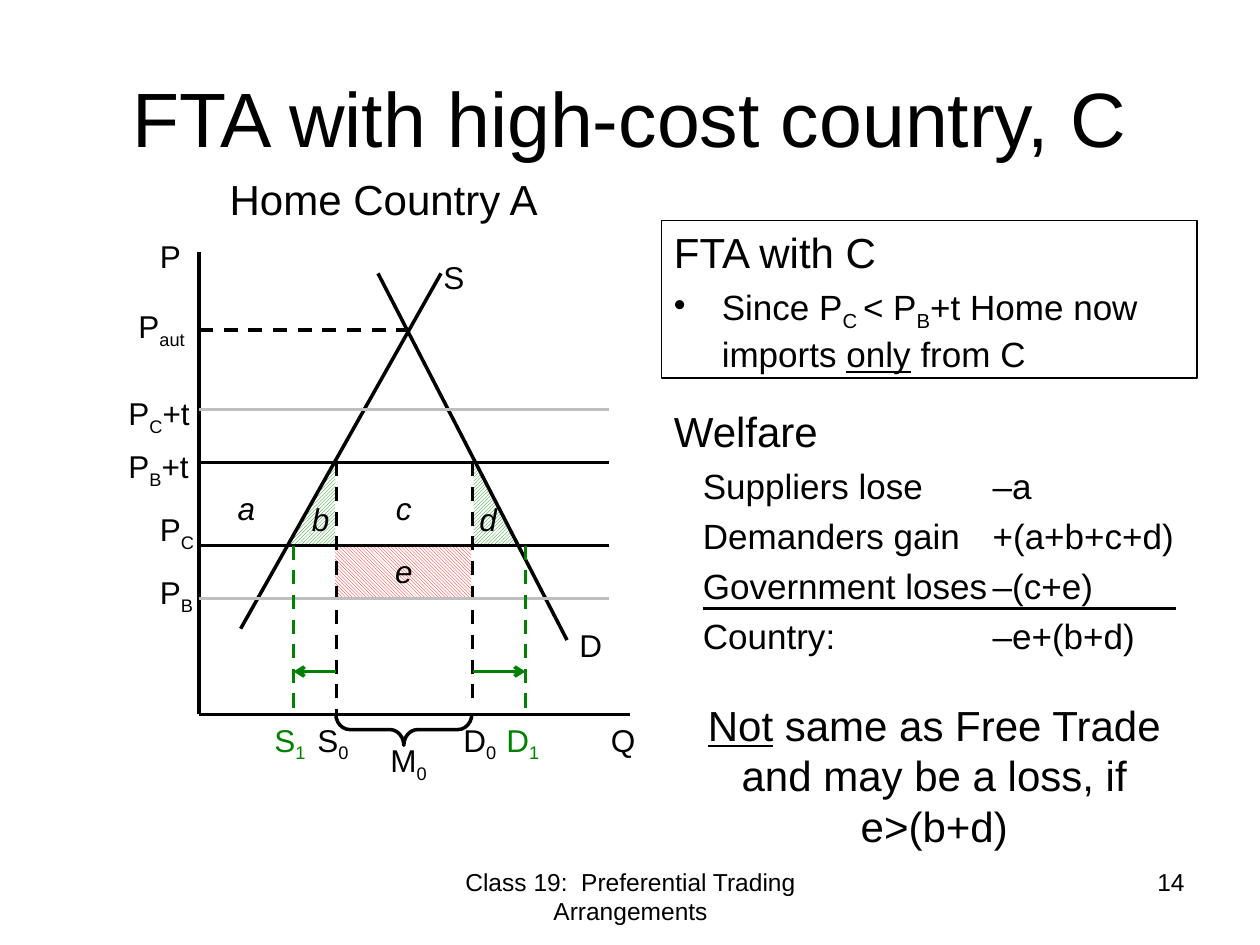
import pptx
import pptx.dml.color
import pptx.enum.dml
import pptx.enum.shapes
import pptx.enum.text
import pptx.oxml
import pptx.oxml.ns
import pptx.util
from pptx.util import Inches

COLORS = {"ink": "000000", "green": "008000", "red": "FF0000",
          "grey": "BFBFBF", "paper": "FFFFFF"}
FONT = "Arial"
ALIGN = pptx.enum.text.PP_ALIGN
SHAPE = pptx.enum.shapes.MSO_SHAPE
PATTERN = pptx.enum.dml.MSO_PATTERN

# Key prices (y) and quantities (x) of the diagram
AXIS_X, AXIS_Y, PRICE_END = 1.58, 5.67, 4.83
P_AUT, P_C_T, P_B_T, P_C, P_B = 2.62, 3.25, 3.67, 4.33, 4.75
S1, S0, D0, D1 = 2.33, 2.67, 3.75, 4.17
CHANGE_Y = 5.33


def rgb(name):
    return pptx.dml.color.RGBColor.from_string(COLORS[name])


def append_xml(parent, tag, **attributes):
    child = pptx.oxml.parse_xml(f"<a:{tag} {pptx.oxml.ns.nsdecls('a')}/>")
    for key, value in attributes.items():
        child.set(key, str(value))
    parent.append(child)
    return child


def add_line(slide, start, end, color="ink", dashed=False, arrow=False):
    line = slide.shapes.add_connector(
        pptx.enum.shapes.MSO_CONNECTOR.STRAIGHT, *map(Inches, start + end))
    line.line.color.rgb = rgb(color)
    line.line.width = pptx.util.Pt(2)
    if dashed:
        line.line.dash_style = pptx.enum.dml.MSO_LINE.DASH
    if arrow:
        append_xml(line.line._get_or_add_ln(), "tailEnd", type="arrow")
    append_xml(line._element.spPr, "effectLst")


def add_shape(slide, kind, box):
    shape = slide.shapes.add_shape(kind, *map(Inches, box))
    shape.shadow.inherit = False
    shape.fill.background()
    shape.line.fill.background()
    return shape


def add_area(slide, kind, box, color, pattern, mirrored=False):
    area = add_shape(slide, kind, box)
    area.fill.patterned()
    area.fill.pattern = pattern
    area.fill.fore_color.rgb = rgb(color)
    area.fill.back_color.rgb = rgb("paper")
    if mirrored:
        area._element.spPr.xfrm.set("flipH", "1")


def write(paragraph, pieces, size, color="ink", align=ALIGN.LEFT, italic=False):
    """Write (text, style) pieces; the style is "", "sub" or "under"."""
    paragraph.alignment = align
    for text, style in pieces:
        run = paragraph.add_run()
        run.text = text
        run.font.name = FONT
        run.font.size = pptx.util.Pt(size)
        run.font.color.rgb = rgb(color)
        if italic:
            run.font.italic = True
        if style == "under":
            run.font.underline = True
        if style == "sub":
            run._r.get_or_add_rPr().set("baseline", "-25000")


def add_text(slide, box, paragraphs, size, anchor="TOP", **style):
    frame = slide.shapes.add_textbox(*map(Inches, box)).text_frame
    frame.word_wrap = True
    frame.vertical_anchor = pptx.enum.text.MSO_ANCHOR[anchor]
    for index, pieces in enumerate(paragraphs):
        paragraph = frame.add_paragraph() if index else frame.paragraphs[0]
        write(paragraph, pieces, size, **style)


def add_label(slide, left, top, width, base, sub="", rest="", **style):
    pieces = [(base, ""), (sub, "sub"), (rest, "")]
    add_text(slide, (left, top, width, 0.4), [[p for p in pieces if p[0]]], 18, **style)


def draw_diagram(slide):
    # Welfare areas
    add_area(slide, SHAPE.RIGHT_TRIANGLE, (2.3, 3.69, 0.36, 0.64), "green",
             PATTERN.DARK_UPWARD_DIAGONAL, mirrored=True)
    add_area(slide, SHAPE.RIGHT_TRIANGLE, (3.76, 3.65, 0.36, 0.69), "green",
             PATTERN.DARK_UPWARD_DIAGONAL)
    add_area(slide, SHAPE.RECTANGLE, (2.66, P_C, 1.08, 0.41), "red",
             PATTERN.DARK_DOWNWARD_DIAGONAL)

    # Axes, demand and supply
    add_line(slide, (AXIS_X, AXIS_Y), (5, AXIS_Y))
    add_line(slide, (AXIS_X, AXIS_Y), (AXIS_X, 2))
    add_line(slide, (4.5, 5.08), (3, 2.17))
    add_line(slide, (1.91, 4.99), (3.5, 2.17))

    # Quantities before the agreement, and imports
    add_line(slide, (AXIS_X, P_AUT), (3.25, P_AUT), dashed=True)
    add_line(slide, (D0, P_B_T), (D0, 5.58), dashed=True)
    add_line(slide, (S0, P_B_T), (S0, AXIS_Y), dashed=True)
    imports = add_shape(slide, SHAPE.LEFT_BRACE, (3.08, 5.25, 0.25, 1.08))
    imports.rotation = 270
    imports.adjustments[0] = 0.44
    imports.line.color.rgb = rgb("ink")
    imports.line.width = pptx.util.Pt(2)

    # Price levels
    for price, color in ((P_B, "grey"), (P_C, "ink"), (P_B_T, "ink"), (P_C_T, "grey")):
        add_line(slide, (AXIS_X, price), (PRICE_END, price), color)

    # Quantities after the agreement
    for before, after in ((S0, S1), (D0, D1)):
        add_line(slide, (after, P_C), (after, AXIS_Y), "green", dashed=True)
        add_line(slide, (before, CHANGE_Y), (after, CHANGE_Y), "green", arrow=True)


def label_diagram(slide):
    add_text(slide, (1.67, 1.33, 2.75, 0.5), [[("Home Country A", "")]], 24,
             align=ALIGN.CENTER)
    # Axes, curves, prices and quantities
    for label in ((1.17, 1.83, 0.75, "P"), (3.42, 2, 0.75, "S"),
                  (4.5, 4.92, 0.42, "D"), (4.75, AXIS_Y, 0.75, "Q"),
                  (1, 2.39, 0.75, "P", "aut"), (0.92, 3.08, 0.75, "P", "C", "+t"),
                  (0.92, 3.5, 0.75, "P", "B", "+t"), (1.17, 4, 0.5, "P", "C"),
                  (1.17, 4.5, 0.5, "P", "B"), (2.42, AXIS_Y, 0.5, "S", "0"),
                  (3, 5.83, 0.58, "M", "0"), (3.58, AXIS_Y, 0.5, "D", "0")):
        add_label(slide, *label)
    for left, curve in ((2.08, "S"), (3.92, "D")):
        add_label(slide, left, AXIS_Y, 0.5, curve, "1", color="green")
    # Area names
    for left, top, area in ((1.58, 3.83, "a"), (2.17, 3.92, "b"), (2.83, 3.83, "c"),
                            (3.5, 3.92, "d"), (2.83, 4.33, "e")):
        add_label(slide, left, top, 0.75, area, align=ALIGN.CENTER, italic=True)


def add_panel(slide, box, heading, points):
    """Add a panel with a heading and return the paragraphs of its points."""
    panel = add_shape(slide, SHAPE.RECTANGLE, box)
    frame = panel.text_frame
    frame.word_wrap = True
    frame.vertical_anchor = pptx.enum.text.MSO_ANCHOR.TOP
    write(frame.paragraphs[0], [(heading, "")], 24)
    for pieces in points:
        paragraph = frame.add_paragraph()
        paragraph.space_before = pptx.util.Pt(4.6)
        write(paragraph, pieces, 20)
    return panel, frame.paragraphs[1:]


def add_agreement(slide):
    point = [("Since P", ""), ("C ", "sub"), ("< P", ""), ("B", "sub"),
             ("+t Home now imports ", ""), ("only", "under"), (" from C", "")]
    panel, (bullet,) = add_panel(slide, (5.25, 1.75, 4.25, 1.25), "FTA with C", [point])
    panel.line.color.rgb = rgb("ink")
    panel.line.width = pptx.util.Pt(0.75)
    properties = bullet._p.get_or_add_pPr()
    properties.set("marL", str(Inches(0.38)))
    properties.set("indent", str(Inches(-0.38)))
    append_xml(properties, "buChar", char="•")


def add_welfare(slide):
    effects = (("Suppliers lose", "–a"), ("Demanders gain", "+(a+b+c+d)"),
               ("Government loses", "–(c+e)"), ("Country:", "–e+(b+d)"))
    rows = [[(f"\t{group}\t{effect}", "")] for group, effect in effects]
    _, paragraphs = add_panel(slide, (5.25, 3.17, 4.25, 2.17), "Welfare", rows)
    for paragraph in paragraphs:
        stops = append_xml(paragraph._p.get_or_add_pPr(), "tabLst")
        for position in (0.23, 2.53):
            append_xml(stops, "tab", pos=Inches(position), algn="l")
    add_line(slide, (5.58, 4.83), (9.33, 4.83))


def main():
    deck = pptx.Presentation()
    deck.slide_width, deck.slide_height = Inches(10), Inches(7.5)
    slide = deck.slides.add_slide(deck.slide_layouts[6])

    # Title
    add_text(slide, (0.5, 0.3, 9, 1.25), [[("FTA with high-cost country, C", "")]], 44,
             anchor="MIDDLE", align=ALIGN.CENTER)

    draw_diagram(slide)
    label_diagram(slide)
    add_agreement(slide)
    add_welfare(slide)

    # Conclusion
    add_text(slide, (5.5, 5.5, 3.83, 1.31),
             [[("Not", "under"), (" same as Free Trade", "")],
              [("and may be a loss, if e>(b+d)", "")]], 24, align=ALIGN.CENTER)

    # Footer
    add_text(slide, (3.42, 6.83, 3.17, 0.52),
             [[("Class 19:  Preferential Trading Arrangements", "")]], 14,
             align=ALIGN.CENTER)
    add_text(slide, (7.17, 6.83, 2.33, 0.52), [[("14", "")]], 14, align=ALIGN.RIGHT)

    deck.save("out.pptx")


if __name__ == "__main__":
    main()
